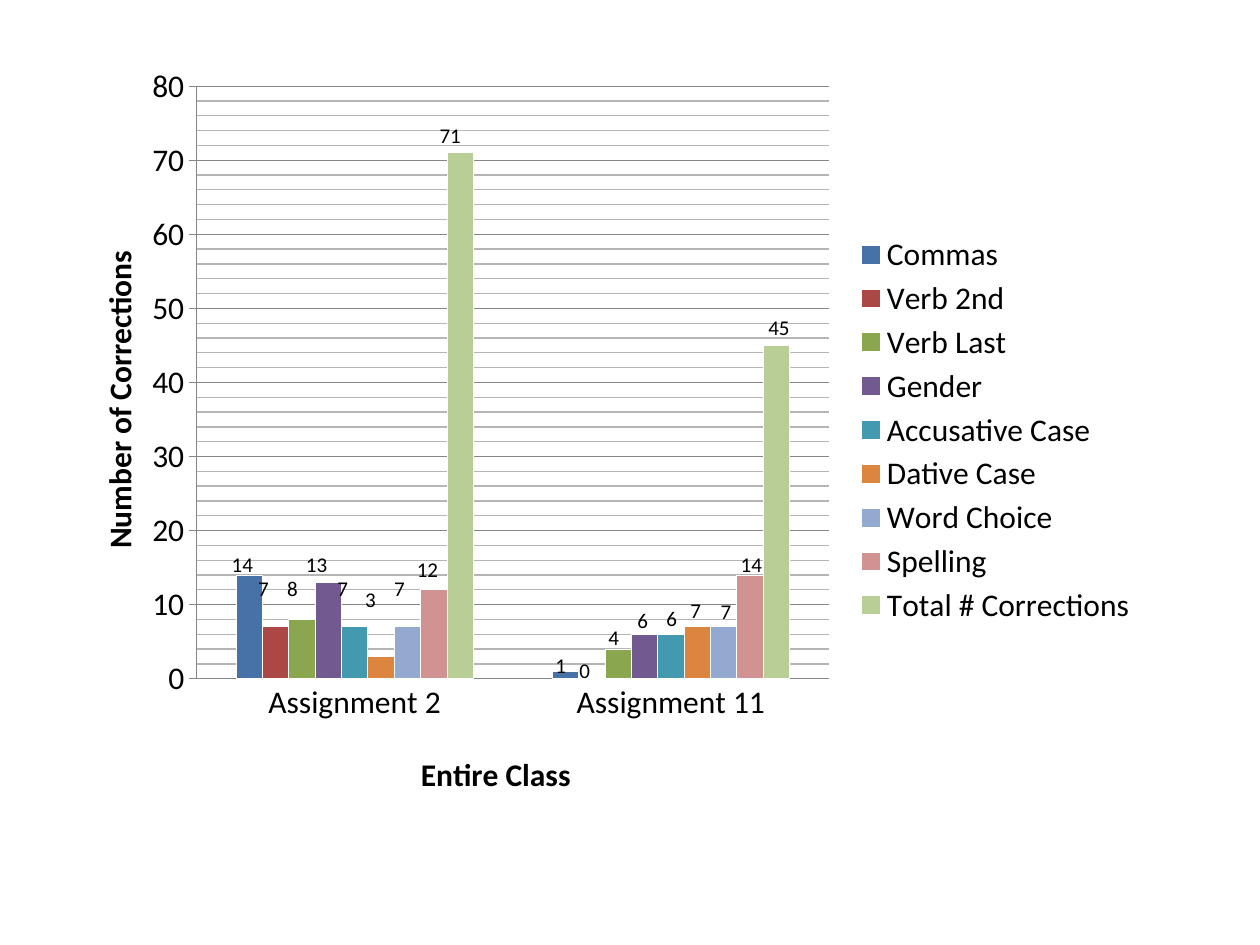
from copy import deepcopy
from dataclasses import dataclass

from lxml import etree
from pptx import Presentation
from pptx.chart.data import CategoryChartData
from pptx.dml.color import RGBColor
from pptx.enum.chart import XL_CHART_TYPE, XL_LEGEND_POSITION, XL_TICK_MARK
from pptx.enum.text import MSO_AUTO_SIZE
from pptx.oxml.ns import qn
from pptx.util import Inches, Pt

COLUMNS = XL_CHART_TYPE.COLUMN_CLUSTERED
RIGHT = XL_LEGEND_POSITION.RIGHT
OUTSIDE, NO_TICK = XL_TICK_MARK.OUTSIDE, XL_TICK_MARK.NONE
FIT = MSO_AUTO_SIZE.SHAPE_TO_FIT_TEXT


@dataclass(frozen=True)
class Theme:
    font: str = "Calibri"
    ink: str = "000000"
    edge: str = "FFFFFF"
    axis: str = "868686"
    minor: str = "B5B5B5"
    body: int = 18
    label: int = 12


THEME = Theme()
GROUPS = ["Assignment 2", "Assignment 11"]
# Name, corrections per assignment, colour
SERIES = [
    ("Commas", (14, 1), "4672A8"),
    ("Verb 2nd ", (7, 0), "AB4744"),
    ("Verb Last", (8, 4), "8AA64F"),
    ("Gender", (13, 6), "725990"),
    ("Accusative Case", (7, 6), "4299B0"),
    ("Dative Case", (3, 7), "DC853E"),
    ("Word Choice ", (7, 7), "93A9CF"),
    ("Spelling ", (12, 14), "D19392"),
    ("Total # Corrections", (71, 45), "B9CD96"),
]
# Left, top and width of the count above each bar, in series order
SPOTS = [
    [(1.74, 4.33, 0.39), (1.95, 4.52, 0.35), (2.18, 4.52, 0.29),
     (2.33, 4.33, 0.38), (2.58, 4.52, 0.39), (2.8, 4.61, 0.33),
     (3.03, 4.52, 0.35), (3.21, 4.37, 0.4), (3.39, 0.92, 0.42)],
    [(4.31, 5.13, 0.33), (4.5, 5.17, 0.29), (4.73, 4.91, 0.29),
     (4.96, 4.77, 0.29), (5.19, 4.76, 0.3), (5.38, 4.69, 0.29),
     (5.62, 4.7, 0.29), (5.78, 4.33, 0.39), (6, 2.45, 0.46)],
]


def style(font, size, bold=False):
    font.name, font.size, font.bold = THEME.font, Pt(size), bold
    font.color.rgb = RGBColor.from_string(THEME.ink)


def write(frame, text, size=THEME.body, bold=False):
    run = frame.paragraphs[0].add_run()
    run.text = text
    style(run.font, size, bold)


def stroke(line, color, width=0.75):
    line.color.rgb = RGBColor.from_string(color)
    line.width = Pt(width)


def place(part, after=None, inner=False, **spot):
    """Set a chart part's position as fractions of the chart."""
    for old in part.findall(qn("c:layout")):
        part.remove(old)
    layout = etree.Element(qn("c:layout"))
    manual = etree.SubElement(layout, qn("c:manualLayout"))
    rules = {"layoutTarget": "inner"} if inner else {}
    rules.update(xMode="edge", yMode="edge", **spot)
    for tag, value in rules.items():
        etree.SubElement(manual, qn("c:" + tag)).set("val", str(value))
    index = 0 if after is None else part.index(part.find(qn(after))) + 1
    part.insert(index, layout)


def name_axis(axis, text, x, y):
    title = axis.axis_title
    write(title.text_frame, text, bold=True)
    place(title._element, after="c:tx", x=x, y=y)
    stroke(axis.format.line, THEME.axis)


def add_grid(axis):
    """Draw major gridlines, and minor ones as a lighter copy."""
    axis.has_major_gridlines = axis.has_minor_gridlines = True
    line = axis.major_gridlines.format.line
    stroke(line, THEME.minor)
    major = axis._element.find(qn("c:majorGridlines"))
    minor = axis._element.find(qn("c:minorGridlines"))
    minor.append(deepcopy(major.find(qn("c:spPr"))))
    stroke(line, THEME.axis)


def add_bars(slide):
    data = CategoryChartData()
    data.categories = GROUPS
    for name, counts, _ in SERIES:
        data.add_series(name, counts)
    chart = slide.shapes.add_chart(
        COLUMNS, Inches(0.46), Inches(0.42), Inches(8.67), Inches(6), data
    ).chart
    chart.has_title = False
    style(chart.font, THEME.body)
    place(chart._chartSpace.chart.plotArea, inner=True,
          x=0.127, y=0.044, w=0.579, h=0.784)

    # Columns
    plot = chart.plots[0]
    plot.gap_width, plot.overlap, plot.vary_by_categories = 300, 0, False
    for bar, (_, _, color) in zip(plot.series, SERIES):
        bar.format.fill.solid()
        bar.format.fill.fore_color.rgb = RGBColor.from_string(color)
        stroke(bar.format.line, THEME.edge, 0.5)

    # Axes
    base, scale = chart.category_axis, chart.value_axis
    name_axis(base, "Entire Class", 0.327, 0.918)
    base.major_tick_mark = NO_TICK
    name_axis(scale, "Number of Corrections", 0.031, 0.254)
    scale.major_tick_mark = OUTSIDE
    scale.minimum_scale, scale.maximum_scale = 0, 80
    scale.major_unit, scale.minor_unit = 10, 2
    add_grid(scale)

    # Legend
    chart.has_legend = True
    key = chart.legend
    key.position, key.include_in_layout = RIGHT, False
    style(key.font, THEME.body)
    place(key._element, after="c:legendPos", x=0.728, y=0.234, w=0.26, h=0.53)


def add_count(slide, count, left, top, width):
    box = slide.shapes.add_textbox(
        Inches(left), Inches(top), Inches(width), Inches(0.3))
    frame = box.text_frame
    frame.word_wrap, frame.auto_size = True, FIT
    write(frame, str(count), size=THEME.label)


def main():
    deck = Presentation()
    deck.slide_width, deck.slide_height = Inches(10), Inches(7.5)
    slide = deck.slides.add_slide(deck.slide_layouts[6])
    add_bars(slide)
    # Counts above the bars
    for group, spots in enumerate(SPOTS):
        for (_, counts, _), spot in zip(SERIES, spots):
            add_count(slide, counts[group], *spot)
    deck.save("out.pptx")


if __name__ == "__main__":
    main()
